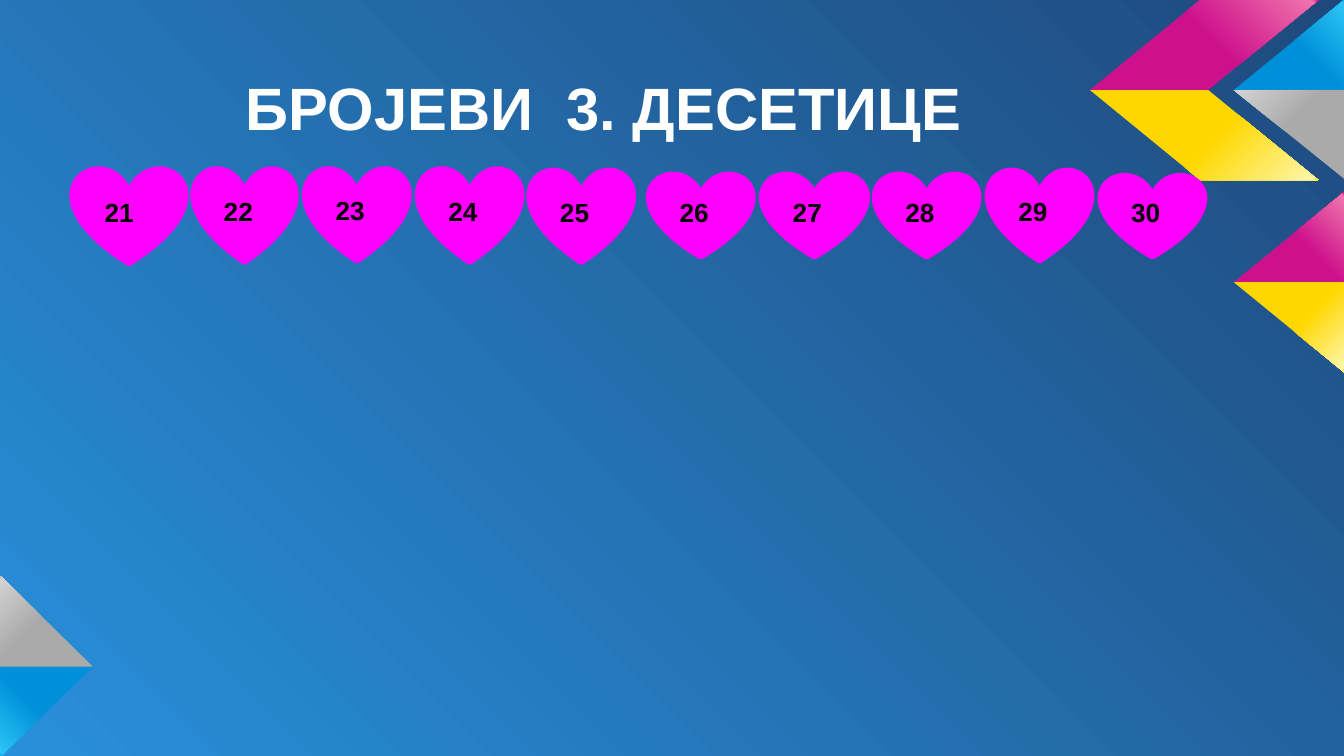
from pptx import Presentation
from pptx.dml.color import RGBColor
from pptx.enum.shapes import MSO_SHAPE as Preset
from pptx.enum.text import MSO_ANCHOR as Anchor, PP_ALIGN as Align
from pptx.oxml import parse_xml
from pptx.oxml.ns import nsdecls
from pptx.util import Inches, Pt

WIDTH = 10
HEIGHT = WIDTH * 9 / 16

WHITE = RGBColor(0xFF, 0xFF, 0xFF)
BLACK = RGBColor(0x00, 0x00, 0x00)
MAGENTA = RGBColor(0xFF, 0x00, 0xFF)
SKY = RGBColor(0x28, 0x90, 0xDA)
NAVY = RGBColor(0x1F, 0x49, 0x7D)


def facet_stops(base, light, edge):
    return [(0, base), (54, base), (98, light), (100, edge)]


BLUE = facet_stops(RGBColor(0x00, 0x90, 0xDA), RGBColor(0x2B, 0xC4, 0xF3), RGBColor(0x00, 0xAE, 0xEE))
GREY = facet_stops(RGBColor(0xAA, 0xAA, 0xAA), RGBColor(0xD2, 0xD2, 0xD2), RGBColor(0xB9, 0xB9, 0xB9))
PINK = facet_stops(RGBColor(0xCD, 0x11, 0x8C), RGBColor(0xF0, 0x74, 0xAC), RGBColor(0xEB, 0x00, 0x8B))
YELLOW = facet_stops(RGBColor(0xFF, 0xD7, 0x00), RGBColor(0xFF, 0xF7, 0xA9), RGBColor(0xFF, 0xF1, 0x00))

FACETS = [
    (BLUE, 135, [(0.69, 4.96), (0, 4.96), (0, HEIGHT), (0.01, HEIGHT)]),
    (GREY, 225, [(0.69, 4.96), (0.01, 4.29), (0, 4.29), (0, 4.96)]),
    (BLUE, 315, [(10, 0), (9.18, 0.67), (10, 0.67)]),
    (GREY, 225, [(9.18, 0.67), (10, 1.33), (10, 0.67)]),
    (PINK, 315, [(8.99, 0.67), (9.81, 0), (8.93, 0), (8.11, 0.67)]),
    (PINK, 315, [(10, 1.43), (9.18, 2.1), (10, 2.1)]),
    (YELLOW, 45, [(9.18, 2.1), (10, 2.77), (10, 2.1)]),
    (YELLOW, 45, [(8.99, 0.67), (9.81, 1.34), (8.93, 1.34), (8.11, 0.67)]),
]

HEARTS = [
    (8.19, 1.3, 0.77, 0.61),
    (7.35, 1.26, 0.77, 0.68),
    (6.51, 1.29, 0.77, 0.62),
    (5.67, 1.29, 0.78, 0.62),
    (4.83, 1.29, 0.77, 0.62),
    (3.94, 1.26, 0.77, 0.69),
    (3.11, 1.25, 0.77, 0.7),
    (2.27, 1.25, 0.77, 0.69),
    (1.44, 1.25, 0.76, 0.7),
    (0.54, 1.25, 0.84, 0.71),
]


def write(frame, text, size, color, anchor=Anchor.TOP, left=0.1):
    frame.word_wrap = True
    frame.vertical_anchor = anchor
    frame.margin_left = Inches(left)
    frame.margin_top = frame.margin_right = frame.margin_bottom = Inches(0.1)
    paragraph = frame.paragraphs[0]
    paragraph.alignment = Align.LEFT
    run = paragraph.add_run()
    run.text = text
    run.font.name, run.font.size, run.font.bold = "Arial", Pt(size), True
    run.font.color.rgb = color


class NumberSlide:
    """Hold the slide and the style shared by its facets, hearts and title."""

    def __init__(self, slide):
        self.slide = slide

    def gradient(self, owner, fill, stops, direction):
        fill.solid()
        solid = owner.xpath(".//a:solidFill")[0]
        marks = "".join(
            f'<a:gs pos="{at * 1000}"><a:srgbClr val="{color}"/></a:gs>' for at, color in stops)
        solid.getparent().replace(solid, parse_xml(
            f'<a:gradFill {nsdecls("a")} rotWithShape="1"><a:gsLst>{marks}</a:gsLst>'
            f'{direction}</a:gradFill>'))

    def backdrop(self, stops):
        self.gradient(
            self.slide.element, self.slide.background.fill, stops,
            '<a:path path="circle"><a:fillToRect t="100000" r="100000"/></a:path>')

    def facet(self, stops, angle, corners):
        start, *rest = [(Inches(x), Inches(y)) for x, y in corners]
        builder = self.slide.shapes.build_freeform(*start)
        builder.add_line_segments(rest, close=True)
        facet = builder.convert_to_shape()
        facet.shadow.inherit = False
        self.gradient(facet.element, facet.fill, stops, f'<a:lin ang="{angle * 60000}" scaled="0"/>')
        facet.line.fill.background()

    def title(self, text, box):
        title = self.slide.shapes.add_textbox(*map(Inches, box))
        write(title.text_frame, text, 32, WHITE, left=1.33)

    def heart(self, number, box):
        heart = self.slide.shapes.add_shape(Preset.HEART, *map(Inches, box))
        heart.shadow.inherit = False
        heart.fill.solid()
        heart.fill.fore_color.rgb = MAGENTA
        heart.line.color.rgb = MAGENTA
        heart.line.width = Pt(3)
        write(heart.text_frame, str(number), 14, BLACK, anchor=Anchor.MIDDLE)


def main():
    deck = Presentation()
    deck.slide_width, deck.slide_height = Inches(WIDTH), Inches(HEIGHT)
    page = NumberSlide(deck.slides.add_slide(deck.slide_layouts[6]))
    page.backdrop([(0, SKY), (100, NAVY)])
    for stops, angle, corners in FACETS:
        page.facet(stops, angle, corners)
    page.title("БРОЈЕВИ  3. ДЕСЕТИЦЕ", (0.5, 0.43, 9, 4.72))
    for number, box in zip(range(30, 20, -1), HEARTS):
        page.heart(number, box)
    deck.save("out.pptx")


if __name__ == "__main__":
    main()
